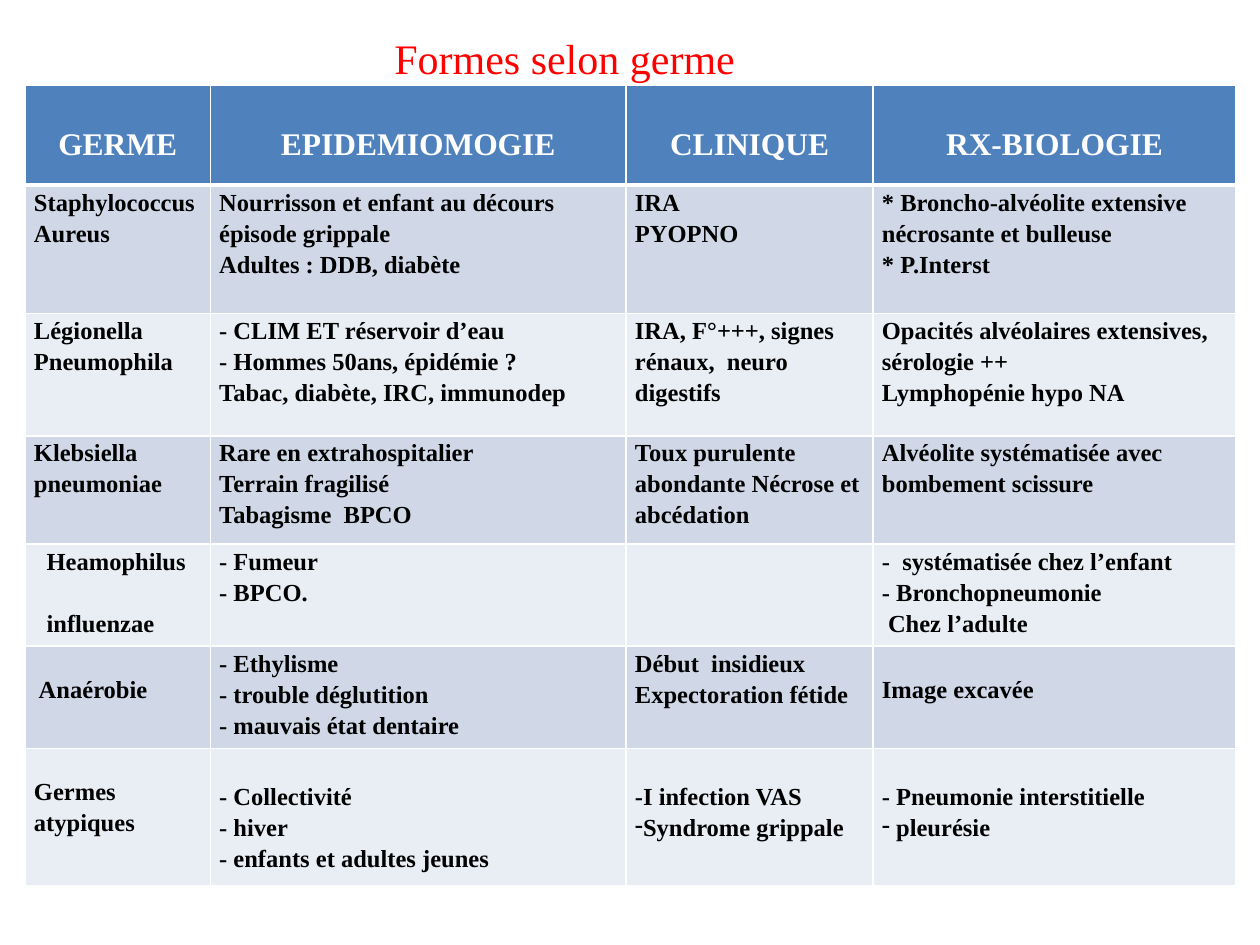
from typing import NamedTuple

from lxml import etree
from pptx import Presentation
from pptx.dml.color import RGBColor
from pptx.enum.text import MSO_ANCHOR, PP_ALIGN
from pptx.oxml.ns import qn
from pptx.util import Inches, Pt

CENTER, LEFT, TOP = PP_ALIGN.CENTER, PP_ALIGN.LEFT, MSO_ANCHOR.TOP
FONT = "Times New Roman"
WHITE, BLACK, RED = "FFFFFF", "000000", "FF0000"
HEADER_FILL, BAND_FILLS = "4F81BD", ("D0D8E8", "E9EDF4")
LINE_SPACING = 1.15
SIDE_INSET = 0.07


class Line(NamedTuple):
    text: str
    dash: bool = False      # starts with a "-" bullet
    before: float = 0       # space above, in points


class Entry(NamedTuple):
    lines: tuple[str | Line, ...]
    top: float = 0          # inset above the text, in inches
    left: float = SIDE_INSET


class Style(NamedTuple):
    size: float
    color: str
    align: PP_ALIGN
    fill: str


def entry(*lines: str | Line, top: float = 0, left: float = SIDE_INSET) -> Entry:
    return Entry(lines, top, left)


COLUMN_WIDTHS = (1.47, 3.3, 1.96, 2.88)
ROW_HEIGHTS = (0.79, 1.02, 0.97, 0.86, 0.81, 0.81, 1.09)
HEADINGS = ("GERME", "EPIDEMIOMOGIE", "CLINIQUE", "RX-BIOLOGIE")
GERMS = (
    (entry("Staphylococcus", "Aureus"),
     entry("Nourrisson et enfant au décours épisode grippale", "Adultes : DDB, diabète"),
     entry("IRA", "PYOPNO"),
     entry("* Broncho-alvéolite extensive nécrosante et bulleuse", "* P.Interst")),
    (entry("Légionella", "Pneumophila"),
     entry("- CLIM ET réservoir d’eau", "- Hommes 50ans, épidémie ?",
           "Tabac, diabète, IRC, immunodep"),
     entry("IRA, F°+++, signes rénaux,  neuro", "digestifs"),
     entry("Opacités alvéolaires extensives, sérologie ++", "Lymphopénie hypo NA")),
    (entry("Klebsiella pneumoniae"),
     entry("Rare en extrahospitalier", "Terrain fragilisé", "Tabagisme  BPCO"),
     entry("Toux purulente abondante Nécrose et abcédation"),
     entry("Alvéolite systématisée avec bombement scissure")),
    (entry("Heamophilus", Line("influenzae", before=18), left=0.17),
     entry("- Fumeur", "- BPCO."),
     entry(),
     entry("-  systématisée chez l’enfant", "- Bronchopneumonie", " Chez l’adulte")),
    (entry(" Anaérobie", top=0.21),
     entry("- Ethylisme", "- trouble déglutition", "- mauvais état dentaire"),
     entry("Début  insidieux", "Expectoration fétide"),
     entry("Image excavée", top=0.21)),
    (entry("Germes atypiques", top=0.21),
     entry("- Collectivité", "- hiver", "- enfants et adultes jeunes", top=0.25),
     entry("-I infection VAS", Line("Syndrome grippale", dash=True), top=0.25),
     entry("- Pneumonie interstitielle", Line(" pleurésie", dash=True), top=0.25)),
)


def rgb(value: str) -> RGBColor:
    return RGBColor.from_string(value)


def add_span(para, text: str, size: float, color: str, bold: bool) -> None:
    span = para.add_run()
    span.text = text
    span.font.name = FONT
    span.font.size = Pt(size)
    span.font.bold = bold
    span.font.color.rgb = rgb(color)


def add_dash(para) -> None:
    properties = para._p.get_or_add_pPr()
    properties.set("marL", "0")
    properties.set("indent", "0")
    etree.SubElement(properties, qn("a:buFontTx"))
    etree.SubElement(properties, qn("a:buChar"), char="-")


def set_borders(cell, top: float, bottom: float) -> None:
    properties = cell._tc.get_or_add_tcPr()
    sides = (("a:lnL", 1), ("a:lnR", 1), ("a:lnT", top), ("a:lnB", bottom))
    for position, (tag, width) in enumerate(sides):
        border = etree.Element(qn(tag), w=str(int(Pt(width))))
        fill = etree.SubElement(border, qn("a:solidFill"))
        etree.SubElement(fill, qn("a:srgbClr"), val=WHITE)
        properties.insert(position, border)


def fill_cell(cell, content: Entry, style: Style) -> None:
    cell.fill.solid()
    cell.fill.fore_color.rgb = rgb(style.fill)
    cell.vertical_anchor = TOP
    cell.margin_left, cell.margin_right = Inches(content.left), Inches(SIDE_INSET)
    cell.margin_top, cell.margin_bottom = Inches(content.top), Inches(0)
    frame = cell.text_frame
    for index, item in enumerate(content.lines):
        line = Line(item) if isinstance(item, str) else item
        para = frame.add_paragraph() if index else frame.paragraphs[0]
        para.alignment = style.align
        para.line_spacing = LINE_SPACING
        if line.before:
            para.space_before = Pt(line.before)
        if line.dash:
            add_dash(para)
        add_span(para, line.text, style.size, style.color, bold=True)


def add_title(page) -> None:
    box = page.shapes.add_textbox(Inches(2.24), Inches(0.21), Inches(4.8), Inches(0.5))
    frame = box.text_frame
    frame.word_wrap = True
    frame.margin_left = Inches(0.89)
    add_span(frame.paragraphs[0], "Formes selon germe", 24, RED, bold=False)


def add_germ_table(page) -> None:
    table = page.shapes.add_table(
        len(ROW_HEIGHTS), len(COLUMN_WIDTHS), Inches(0.2), Inches(0.68),
        Inches(sum(COLUMN_WIDTHS)), Inches(sum(ROW_HEIGHTS))).table
    for column, width in zip(table.columns, COLUMN_WIDTHS):
        column.width = Inches(width)
    for row, height in zip(table.rows, ROW_HEIGHTS):
        row.height = Inches(height)

    headings = tuple(entry(heading, top=0.29) for heading in HEADINGS)
    for row_index, contents in enumerate((headings, *GERMS)):
        if row_index == 0:
            style = Style(18, WHITE, CENTER, HEADER_FILL)
        else:
            style = Style(14, BLACK, LEFT, BAND_FILLS[(row_index - 1) % 2])
        for column_index, content in enumerate(contents):
            cell = table.cell(row_index, column_index)
            fill_cell(cell, content, style)
            # A thicker rule separates the headings from the germs
            set_borders(cell, top=3 if row_index == 1 else 1,
                        bottom=3 if row_index == 0 else 1)


def main() -> None:
    deck = Presentation()
    deck.slide_width, deck.slide_height = Inches(10), Inches(7.5)
    page = deck.slides.add_slide(deck.slide_layouts[6])
    add_title(page)
    add_germ_table(page)
    deck.save("out.pptx")


if __name__ == "__main__":
    main()
